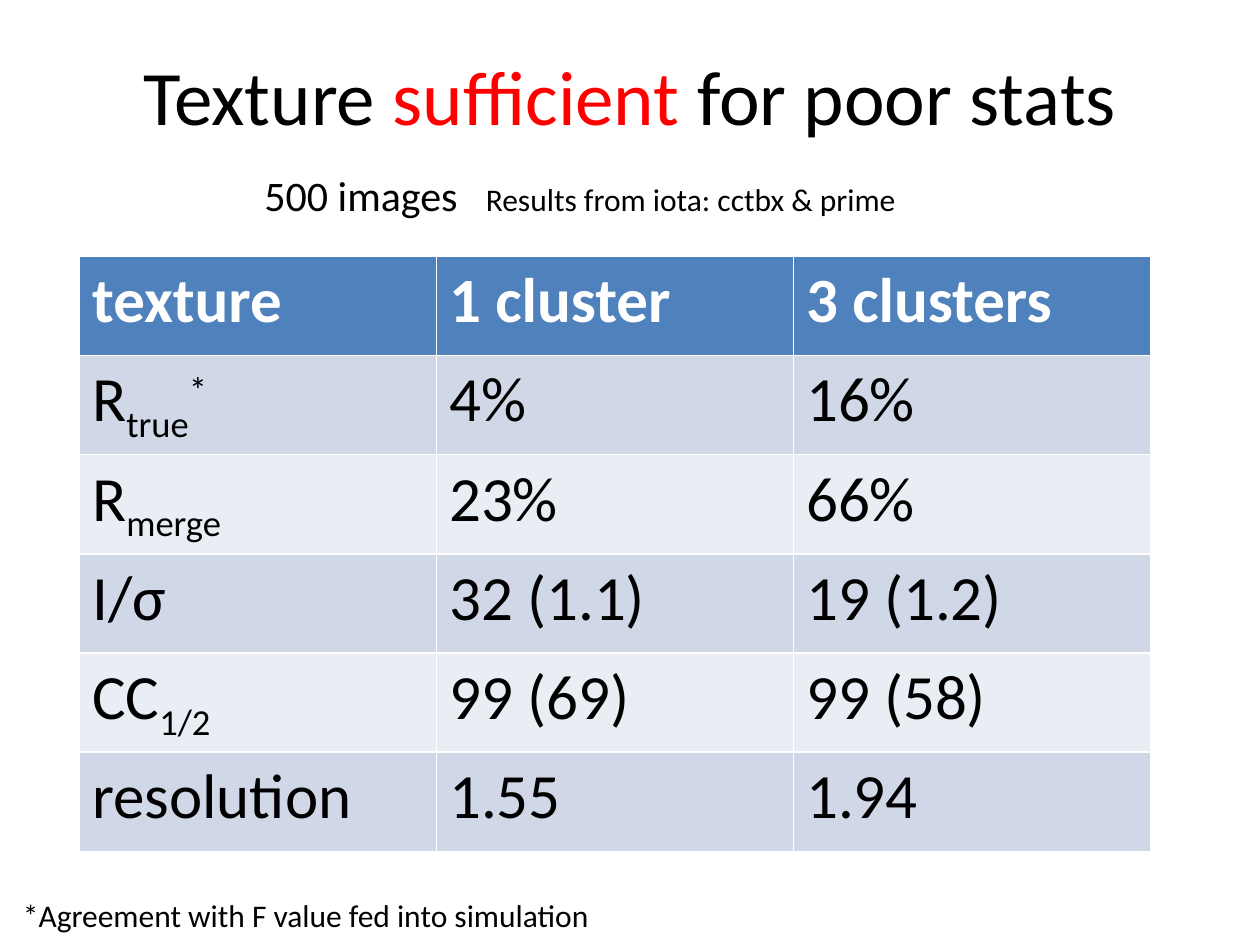
"""Build the slide comparing merging statistics for one and three texture clusters."""
import pptx
import pptx.util
import pptx.dml.color
import pptx.oxml
import pptx.oxml.ns
from pptx.util import Pt


def color(value):
    return pptx.dml.color.RGBColor.from_string(value)


def add_text(p, text, size=36, fill="000000", bold=False, baseline=0):
    r = p.add_run()
    r.text = text
    r.font.name = "Calibri"
    r.font.size = Pt(size)
    r.font.bold = bold
    r.font.color.rgb = color(fill)
    if baseline:
        r.font._element.set("baseline", str(baseline * 1000))


prs = pptx.Presentation()
prs.slide_width, prs.slide_height = Pt(720), Pt(540)
s = prs.slides.add_slide(prs.slide_layouts[5])

title = s.shapes.title
title.left, title.top, title.width, title.height = Pt(0), Pt(0), Pt(720), Pt(108)
p = title.text_frame.paragraphs[0]
add_text(p, "Texture ", size=44)
add_text(p, "sufficient", size=44, fill="FF0000")
add_text(p, " for poor stats", size=44)

rows = [
    ["texture", "1 cluster", "3 clusters"],
    [[("R", 0), ("true", -25), ("*", 30)], "4%", "16%"],
    [[("R", 0), ("merge", -25)], "23%", "66%"],
    ["I/σ", "32 (1.1)", "19 (1.2)"],
    [[("CC", 0), ("1/2", -25)], "99 (69)", "99 (58)"],
    ["resolution", "1.55", "1.94"],
]
table = s.shapes.add_table(6, 3, Pt(45.5), Pt(146.5), Pt(612), Pt(340)).table
for i, row in enumerate(rows):
    header = i == 0
    band = "4F81BD" if header else ("E9EDF4", "D0D8E8")[i % 2]
    for j, content in enumerate(row):
        cell = table.cell(i, j)
        cell.fill.solid()
        cell.fill.fore_color.rgb = color(band)
        parts = [(content, 0)] if isinstance(content, str) else content
        for text, baseline in parts:
            add_text(cell.text_frame.paragraphs[0], text, bold=header, baseline=baseline,
                     fill="FFFFFF" if header else "000000")

notes = [
    ((144, 93.6, 417, 36), [("500 images\t", 24), ("Results from iota: cctbx & prime", 18)]),
    ((6, 508.5, 364, 29), [("*Agreement with F value fed into simulation", 18)]),
]
for box, parts in notes:
    tf = s.shapes.add_textbox(*map(Pt, box)).text_frame
    tf.word_wrap = True
    p = tf.paragraphs[0]
    if len(parts) > 1:
        tabs = pptx.oxml.parse_xml(
            f'<a:tabLst {pptx.oxml.ns.nsdecls("a")}><a:tab pos="{Pt(126.5)}" algn="l"/></a:tabLst>')
        p._p.get_or_add_pPr().append(tabs)
    for text, size in parts:
        add_text(p, text, size=size)

prs.save("out.pptx")
